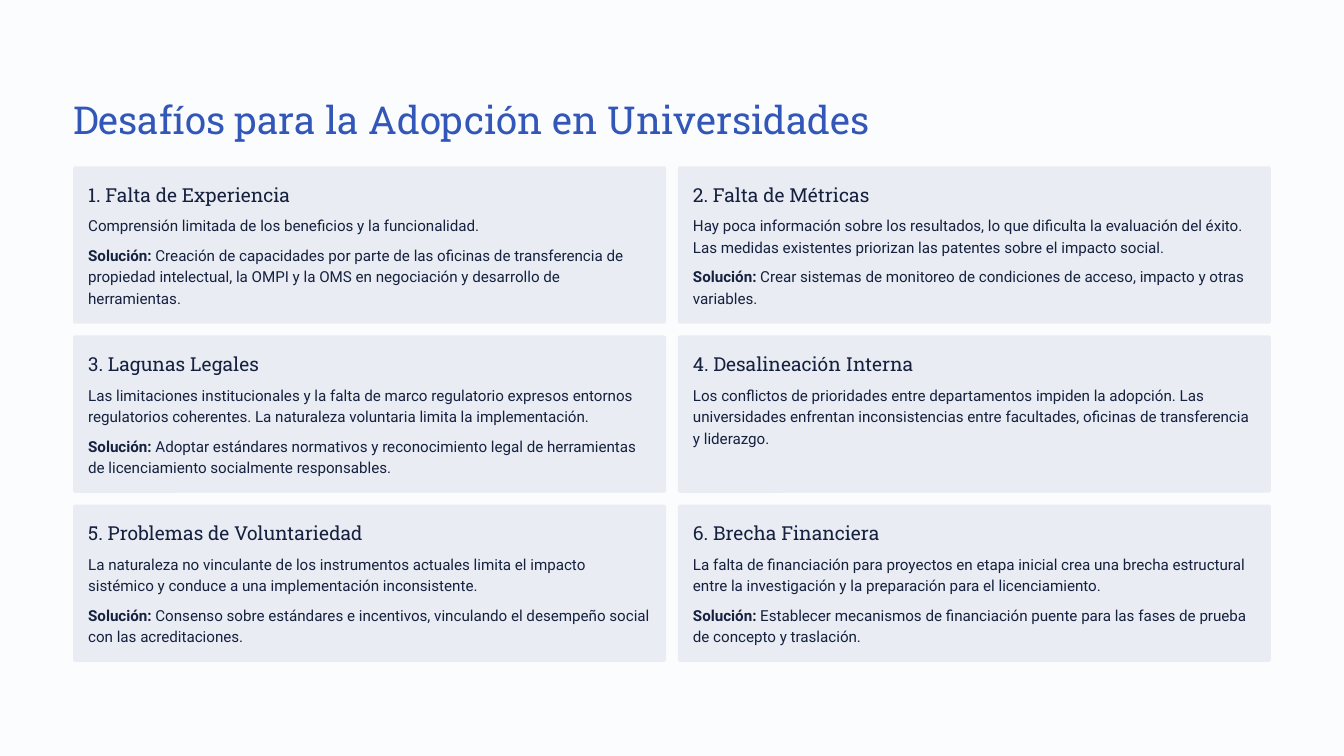
from dataclasses import dataclass

from pptx import Presentation
from pptx.dml.color import RGBColor
from pptx.enum.shapes import MSO_SHAPE
from pptx.enum.text import MSO_ANCHOR, MSO_AUTO_SIZE, PP_ALIGN
from pptx.util import Inches, Pt


@dataclass(frozen=True)
class Theme:
    background: RGBColor = RGBColor.from_string("FBFCFE")
    card: RGBColor = RGBColor.from_string("E9ECF2")
    accent: RGBColor = RGBColor.from_string("3257B8")
    ink: RGBColor = RGBColor.from_string("15213F")
    heading_font: str = "Roboto Slab"
    body_font: str = "Roboto"
    # Each text style: size and line spacing in points
    title: tuple = (33, 41.5)
    heading: tuple = (16.5, 20.5)
    body: tuple = (13, 18.5)
    solution_gap: float = 6.75


THEME = Theme()

# Card grid, in inches
SLIDE_WIDTH, SLIDE_HEIGHT = 16, 9
MARGIN = 0.87
GRID_TOP, GRID_BOTTOM = 1.98, 7.88
COLUMNS, ROWS, GAP = 2, 3, 0.14
CARD_WIDTH = (SLIDE_WIDTH - 2 * MARGIN - (COLUMNS - 1) * GAP) / COLUMNS
CARD_HEIGHT = (GRID_BOTTOM - GRID_TOP - (ROWS - 1) * GAP) / ROWS
PADDING = 0.18
HEADING_OFFSET, BODY_OFFSET = 0.19, 0.56

TITLE = "Desafíos para la Adopción en Universidades"
SOLUTION_LABEL = "Solución:"

# Heading, challenge, solution
CHALLENGES = [
    ("Falta de Experiencia",
     "Comprensión limitada de los beneficios y la funcionalidad.",
     "Creación de capacidades por parte de las oficinas de transferencia de "
     "propiedad intelectual, la OMPI y la OMS en negociación y desarrollo de "
     "herramientas."),
    ("Falta de Métricas",
     "Hay poca información sobre los resultados, lo que dificulta la "
     "evaluación del éxito. Las medidas existentes priorizan las patentes "
     "sobre el impacto social.",
     "Crear sistemas de monitoreo de condiciones de acceso, impacto y otras "
     "variables."),
    ("Lagunas Legales",
     "Las limitaciones institucionales y la falta de marco regulatorio "
     "expresos entornos regulatorios coherentes. La naturaleza voluntaria "
     "limita la implementación.",
     "Adoptar estándares normativos y reconocimiento legal de herramientas de "
     "licenciamiento socialmente responsables."),
    ("Desalineación Interna",
     "Los conflictos de prioridades entre departamentos impiden la adopción. "
     "Las universidades enfrentan inconsistencias entre facultades, oficinas "
     "de transferencia y liderazgo.",
     None),
    ("Problemas de Voluntariedad",
     "La naturaleza no vinculante de los instrumentos actuales limita el "
     "impacto sistémico y conduce a una implementación inconsistente.",
     "Consenso sobre estándares e incentivos, vinculando el desempeño social "
     "con las acreditaciones."),
    ("Brecha Financiera",
     "La falta de financiación para proyectos en etapa inicial crea una "
     "brecha estructural entre la investigación y la preparación para el "
     "licenciamiento.",
     "Establecer mecanismos de financiación puente para las fases de prueba "
     "de concepto y traslación."),
]


def set_format(target, values):
    for name, value in values.items():
        setattr(target, name, value)


def set_frame(text_frame):
    set_format(text_frame, {
        "margin_left": 0, "margin_right": 0, "margin_top": 0,
        "margin_bottom": 0, "word_wrap": True,
        "auto_size": MSO_AUTO_SIZE.NONE, "vertical_anchor": MSO_ANCHOR.TOP})


def write_runs(paragraph, runs, style, font_name, color, space_before=0):
    """Fill a paragraph with (text, bold) runs in one text style."""
    size, line_spacing = style
    set_format(paragraph, {
        "alignment": PP_ALIGN.LEFT, "line_spacing": Pt(line_spacing),
        "space_before": Pt(space_before), "space_after": Pt(0)})
    for text, bold in runs:
        run = paragraph.add_run()
        run.text = text
        set_format(run.font, {"name": font_name, "size": Pt(size), "bold": bold})
        run.font.color.rgb = color


def add_text_frame(slide, left, top, width, height):
    box = slide.shapes.add_textbox(*map(Inches, (left, top, width, height)))
    set_frame(box.text_frame)
    return box.text_frame


def write_title(slide):
    title = slide.shapes.title
    set_format(title, {
        "left": Inches(MARGIN), "top": Inches(1.12),
        "width": Inches(SLIDE_WIDTH - 2 * MARGIN), "height": Inches(0.58)})
    set_frame(title.text_frame)
    write_runs(title.text_frame.paragraphs[0], [(TITLE, False)],
               THEME.title, THEME.heading_font, THEME.accent)


def add_card(slide, index, heading, challenge, solution):
    row, column = divmod(index, COLUMNS)
    left = MARGIN + column * (CARD_WIDTH + GAP)
    top = GRID_TOP + row * (CARD_HEIGHT + GAP)

    # Card panel
    panel = slide.shapes.add_shape(
        MSO_SHAPE.ROUNDED_RECTANGLE,
        *map(Inches, (left, top, CARD_WIDTH, CARD_HEIGHT)))
    panel.adjustments[0] = 0.015
    panel.shadow.inherit = False
    panel.fill.solid()
    panel.fill.fore_color.rgb = THEME.card
    panel.line.fill.background()

    # Numbered heading
    text_left, text_width = left + PADDING, CARD_WIDTH - 2 * PADDING
    frame = add_text_frame(slide, text_left, top + HEADING_OFFSET, text_width, 0.29)
    write_runs(frame.paragraphs[0], [(f"{index + 1}. {heading}", False)],
               THEME.heading, THEME.heading_font, THEME.ink)

    # Challenge and its solution
    frame = add_text_frame(slide, text_left, top + BODY_OFFSET, text_width,
                           CARD_HEIGHT - BODY_OFFSET - PADDING)
    write_runs(frame.paragraphs[0], [(challenge, False)],
               THEME.body, THEME.body_font, THEME.ink)
    if solution:
        write_runs(frame.add_paragraph(),
                   [(SOLUTION_LABEL, True), (f" {solution}", False)],
                   THEME.body, THEME.body_font, THEME.ink, THEME.solution_gap)


def main():
    presentation = Presentation()
    set_format(presentation, {"slide_width": Inches(SLIDE_WIDTH),
                              "slide_height": Inches(SLIDE_HEIGHT)})
    title_only = presentation.slide_layouts.get_by_name("Title Only")
    slide = presentation.slides.add_slide(title_only)
    slide.background.fill.solid()
    slide.background.fill.fore_color.rgb = THEME.background
    write_title(slide)
    for index, challenge in enumerate(CHALLENGES):
        add_card(slide, index, *challenge)
    presentation.save("out.pptx")


if __name__ == "__main__":
    main()
